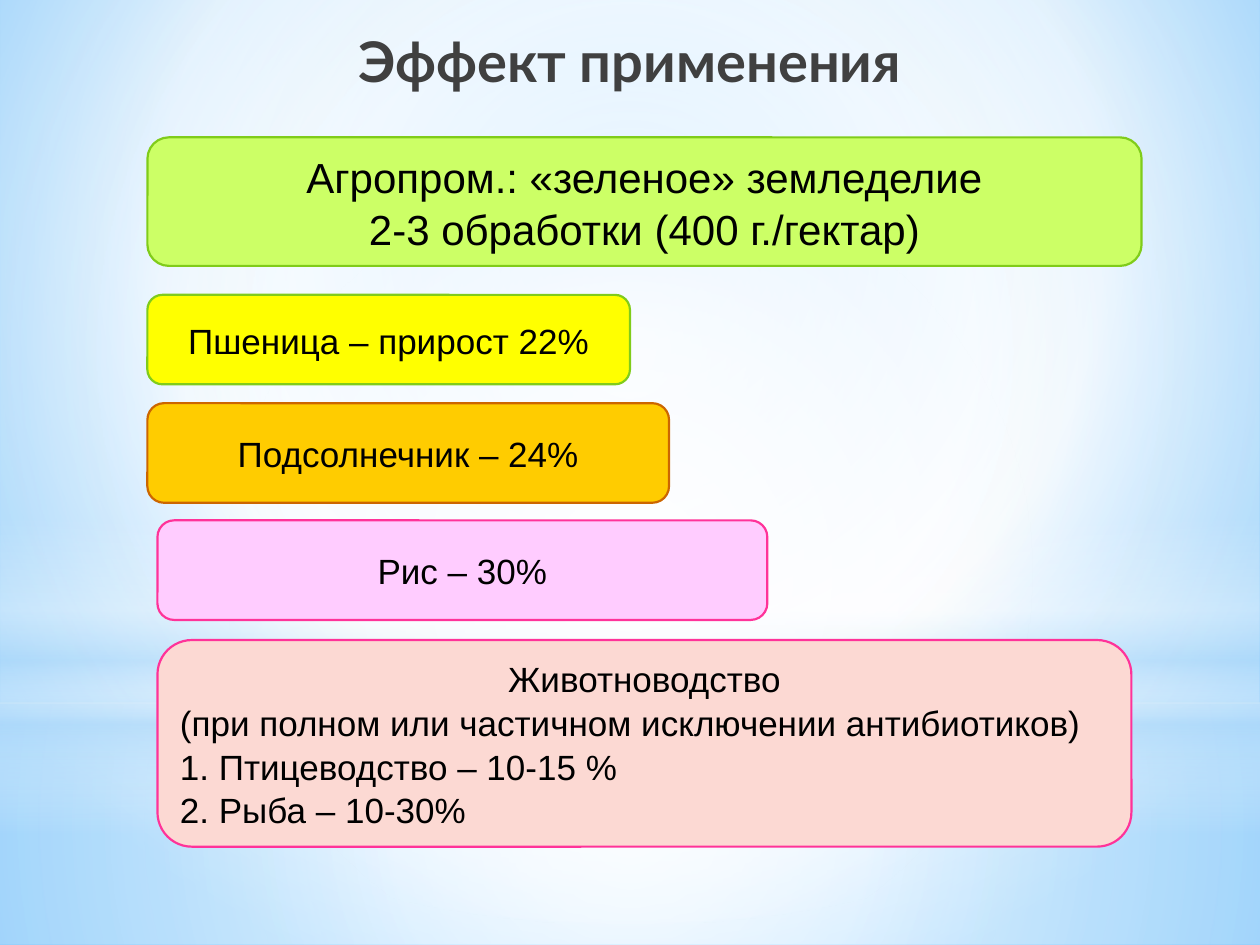
from lxml import etree
from pptx import Presentation
from pptx.dml.color import RGBColor
from pptx.enum.shapes import MSO_SHAPE
from pptx.enum.text import MSO_ANCHOR, PP_ALIGN
from pptx.oxml.ns import qn
from pptx.util import Inches, Pt

BLACK = RGBColor(0x00, 0x00, 0x00)
TITLE_GRAY = RGBColor(0x40, 0x40, 0x40)
WHITE = RGBColor(0xFF, 0xFF, 0xFF)
PALE_BLUE = RGBColor(0xB4, 0xDC, 0xFA)
SKY = RGBColor(0x9E, 0xD5, 0xFF)
DEEP_SKY = RGBColor(0x5B, 0xB9, 0xFF)
LIME = RGBColor(0xCC, 0xFF, 0x66)
GREEN = RGBColor(0x80, 0xCC, 0x1A)
YELLOW = RGBColor(0xFF, 0xFF, 0x00)
AMBER = RGBColor(0xFF, 0xCC, 0x00)
BROWN = RGBColor(0xCC, 0x66, 0x00)
PINK = RGBColor(0xFF, 0xCC, 0xFF)
MAGENTA = RGBColor(0xFF, 0x33, 0x99)
PEACH = RGBColor(0xFC, 0xD9, 0xD3)

CENTER_FOCUS = (50, 50, 50, 50)


def apply_gradient(fill, container, stops, focus=None):
    """Fill with (position, colour, opacity) stops: radial around focus, else downwards."""
    fill.solid()
    solid = container.find(".//" + qn("a:solidFill"))
    gradient = etree.Element(qn("a:gradFill"), rotWithShape="1")
    stop_list = etree.SubElement(gradient, qn("a:gsLst"))
    for position, color, opacity in stops:
        stop = etree.SubElement(stop_list, qn("a:gs"), pos=str(position * 1000))
        tint = etree.SubElement(stop, qn("a:srgbClr"), val=str(color))
        if opacity < 100:
            etree.SubElement(tint, qn("a:alpha"), val=str(opacity * 1000))
    if focus:
        path = etree.SubElement(gradient, qn("a:path"), path="circle")
        edges = {side: str(value * 1000) for side, value in zip("ltrb", focus)}
        etree.SubElement(path, qn("a:fillToRect"), **edges)
    else:
        etree.SubElement(gradient, qn("a:lin"), ang="5400000", scaled="0")
    solid.getparent().replace(solid, gradient)


def add_glow(slide, kind, top, height, stops, focus=None):
    """Full-width translucent layer of the backdrop."""
    glow = slide.shapes.add_shape(kind, 0, Inches(top), Inches(10), Inches(height))
    glow.shadow.inherit = False
    glow.line.fill.background()
    apply_gradient(glow.fill, glow._element.spPr, stops, focus)


def add_backdrop(slide):
    background = slide.background
    apply_gradient(background.fill, slide._element,
                   [(0, SKY, 100), (60, WHITE, 100), (100, DEEP_SKY, 100)],
                   (20, 10, 20, 60))
    add_glow(slide, MSO_SHAPE.RECTANGLE, 5.58, 1.92,
             [(0, WHITE, 91), (37, WHITE, 76), (100, PALE_BLUE, 79)], CENTER_FOCUS)
    add_glow(slide, MSO_SHAPE.RECTANGLE, 0, 5.58,
             [(0, WHITE, 89), (48, WHITE, 62), (100, PALE_BLUE, 79)], CENTER_FOCUS)
    add_glow(slide, MSO_SHAPE.RECTANGLE, 4.12, 2.5,
             [(0, WHITE, 0), (29, WHITE, 30), (45, PALE_BLUE, 40),
              (55, WHITE, 26), (65, PALE_BLUE, 60), (100, WHITE, 0)])
    add_glow(slide, MSO_SHAPE.OVAL, 1.75, 5.58,
             [(0, WHITE, 100), (56, WHITE, 0)], CENTER_FOCUS)


def format_text(frame, font_name, size, color, bold=False):
    frame.word_wrap = True
    for paragraph in frame.paragraphs:
        paragraph.alignment = PP_ALIGN.CENTER
        for run in paragraph.runs:
            run.font.name = font_name
            run.font.size = Pt(size)
            run.font.color.rgb = color
            run.font.bold = bold


def add_title(slide, text):
    title = slide.shapes.add_textbox(Inches(1.56), Inches(0.16), Inches(6.88), Inches(1.02))
    title.text_frame.text = text
    format_text(title.text_frame, "Lato", 32, TITLE_GRAY, bold=True)


def add_card(slide, box, fill_color, border_color, lines, size=20):
    """Rounded card whose heading lines are centred."""
    card = slide.shapes.add_shape(MSO_SHAPE.ROUNDED_RECTANGLE, *map(Inches, box))
    card.shadow.inherit = False
    card.fill.solid()
    card.fill.fore_color.rgb = fill_color
    card.line.color.rgb = border_color
    card.line.width = Pt(1.25)
    frame = card.text_frame
    frame.text = "\n".join(lines)
    frame.vertical_anchor = MSO_ANCHOR.MIDDLE
    format_text(frame, "Arial", size, BLACK)
    for paragraph in frame.paragraphs:
        paragraph.line_spacing = 1.04
    return card


def main():
    presentation = Presentation()
    presentation.slide_width = Inches(10)
    presentation.slide_height = Inches(7.5)
    slide = presentation.slides.add_slide(presentation.slide_layouts[6])

    add_backdrop(slide)
    add_card(slide, (1.17, 1.09, 7.89, 1.02), LIME, GREEN,
             ["Агропром.: «зеленое» земледелие", "2-3 обработки (400 г./гектар)"], size=24)
    add_card(slide, (1.17, 2.34, 3.83, 0.71), YELLOW, GREEN, ["Пшеница – прирост 22%"])
    livestock = add_card(slide, (1.25, 5.08, 7.73, 1.64), PEACH, MAGENTA,
                         ["Животноводство",
                          "(при полном или частичном исключении антибиотиков)",
                          "1. Птицеводство – 10-15 %",
                          "2. Рыба – 10-30%"])
    for detail in livestock.text_frame.paragraphs[1:]:
        detail.alignment = PP_ALIGN.LEFT
    add_card(slide, (1.25, 4.13, 4.84, 0.79), PINK, MAGENTA, ["Рис – 30%"])
    add_card(slide, (1.17, 3.2, 4.14, 0.79), AMBER, BROWN, ["Подсолнечник – 24%"])
    add_title(slide, "Эффект применения")

    presentation.save("out.pptx")


if __name__ == "__main__":
    main()
